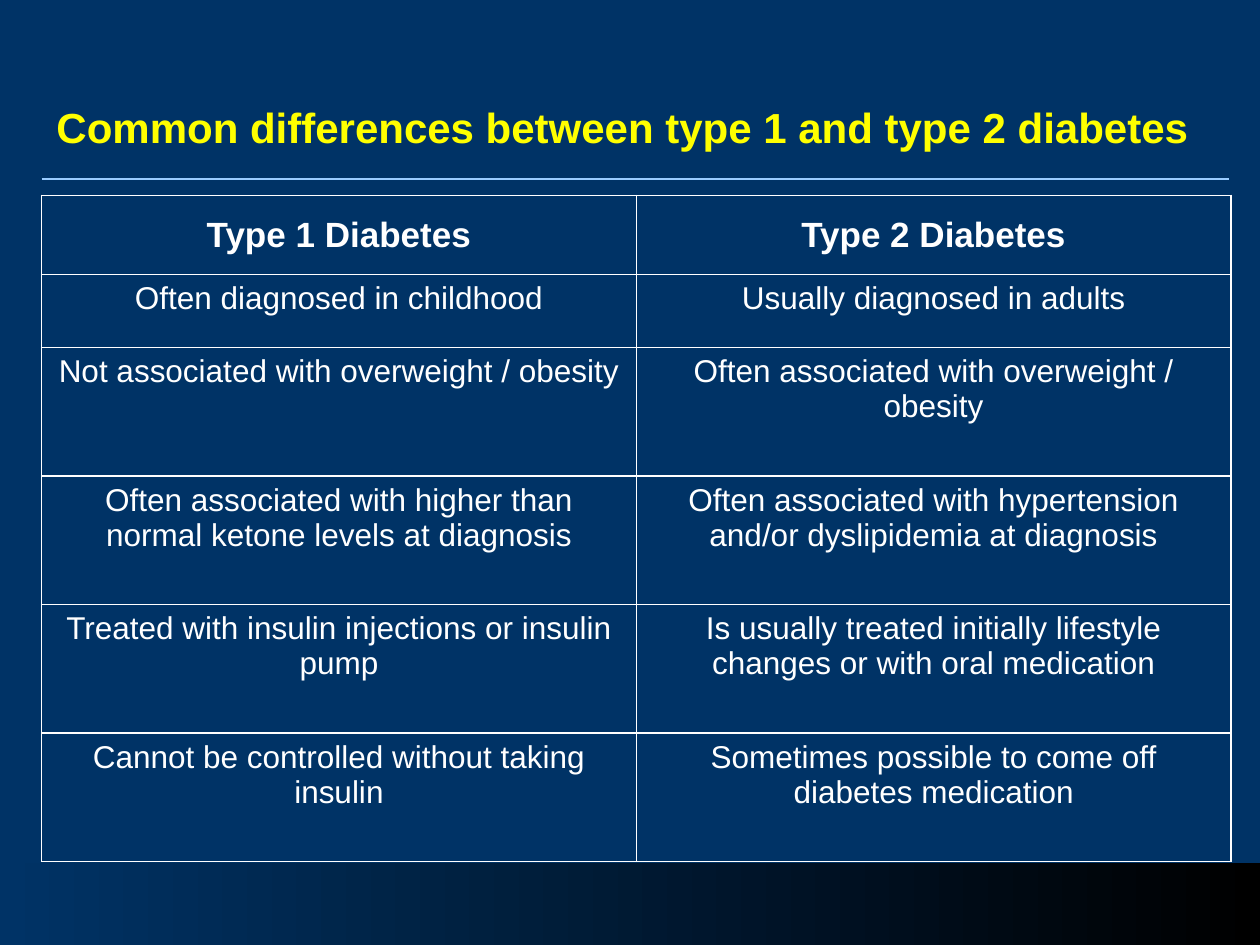
from dataclasses import dataclass

from lxml import etree
from pptx import Presentation
from pptx.dml.color import RGBColor
from pptx.enum.shapes import MSO_CONNECTOR as Connector, MSO_SHAPE as Shape
from pptx.enum.text import MSO_ANCHOR as Anchor, MSO_AUTO_SIZE as AutoSize, PP_ALIGN as Align
from pptx.oxml.ns import qn
from pptx.util import Inches, Pt

NAVY, BLACK, WHITE = "003366", "000000", "FFFFFF"
YELLOW, PALE_BLUE = "FFFF00", "99CCFF"
COLUMN_WIDTH = 4.72


@dataclass
class Row:
    height: float
    type_1: str
    type_2: str
    header: bool = False


ROWS = [
    Row(0.63, "Type 1 Diabetes", "Type 2 Diabetes", header=True),
    Row(0.58, "Often diagnosed in childhood", "Usually diagnosed in adults"),
    Row(1.02, "Not associated with overweight / obesity",
        "Often associated with overweight / obesity"),
    Row(1.02, "Often associated with higher than normal ketone levels at diagnosis",
        "Often associated with hypertension and/or dyslipidemia at diagnosis"),
    Row(1.02, "Treated with insulin injections or insulin pump",
        "Is usually treated initially lifestyle changes or with oral medication"),
    Row(1.02, "Cannot be controlled without taking insulin",
        "Sometimes possible to come off diabetes medication"),
]


def rgb(code: str) -> RGBColor:
    return RGBColor.from_string(code)


def write(frame, text: str, *, size: float, color: str, bold: bool = False,
          align: Align = Align.LEFT) -> None:
    para = frame.paragraphs[0]
    para.alignment = align
    span = para.add_run()
    span.text = text
    span.font.name = "Arial"
    span.font.size = Pt(size)
    span.font.bold = bold
    span.font.color.rgb = rgb(color)


def add_rule(page) -> None:
    y = Inches(1.42)
    rule = page.shapes.add_connector(Connector.STRAIGHT, Inches(0.33), y, Inches(9.75), y)
    rule.line.color.rgb = rgb(PALE_BLUE)
    rule.line.width = Pt(1)
    etree.SubElement(rule._element.spPr, qn("a:effectLst"))


def add_footer_band(page) -> None:
    band = page.shapes.add_shape(Shape.RECTANGLE, 0, Inches(6.85), Inches(10), Inches(0.65))
    band.shadow.inherit = False
    band.line.fill.background()
    band.fill.gradient()
    band.fill.gradient_angle = 0
    for stop, position, color in zip(band.fill.gradient_stops, (0, 1), (NAVY, BLACK)):
        stop.position = position
        stop.color.rgb = rgb(color)


def add_title(page, text: str) -> None:
    box = page.shapes.add_textbox(Inches(0.35), Inches(0.76), Inches(9.36), Inches(0.5))
    box.text_frame.word_wrap = False
    box.text_frame.auto_size = AutoSize.SHAPE_TO_FIT_TEXT
    write(box.text_frame, text, size=24, color=YELLOW, bold=True)


def add_borders(cell, color: str, width: float) -> None:
    properties = cell._tc.get_or_add_tcPr()
    for side in ("lnL", "lnR", "lnT", "lnB"):
        line = etree.SubElement(properties, qn(f"a:{side}"), w=str(Pt(width)))
        fill = etree.SubElement(line, qn("a:solidFill"))
        etree.SubElement(fill, qn("a:srgbClr"), val=color)


def add_comparison(page, rows: list[Row]) -> None:
    height = sum(row.height for row in rows)
    table = page.shapes.add_table(len(rows), 2, Inches(0.33), Inches(1.55),
                                  Inches(2 * COLUMN_WIDTH), Inches(height)).table
    table.first_row = table.horz_banding = False
    for column in table.columns:
        column.width = Inches(COLUMN_WIDTH)
    for index, row in enumerate(rows):
        table.rows[index].height = Inches(row.height)
        for cell, text in zip(table.rows[index].cells, (row.type_1, row.type_2)):
            add_borders(cell, WHITE, 1)
            cell.fill.background()
            cell.vertical_anchor = Anchor.MIDDLE if row.header else Anchor.TOP
            write(cell.text_frame, text, size=20 if row.header else 18,
                  color=WHITE, bold=row.header, align=Align.CENTER)


def main() -> None:
    deck = Presentation()
    deck.slide_width, deck.slide_height = Inches(10), Inches(7.5)
    page = deck.slides.add_slide(deck.slide_layouts[6])
    page.background.fill.solid()
    page.background.fill.fore_color.rgb = rgb(NAVY)
    add_rule(page)
    add_footer_band(page)
    add_title(page, "Common differences between type 1 and type 2 diabetes")
    add_comparison(page, ROWS)
    deck.save("out.pptx")


if __name__ == "__main__":
    main()
